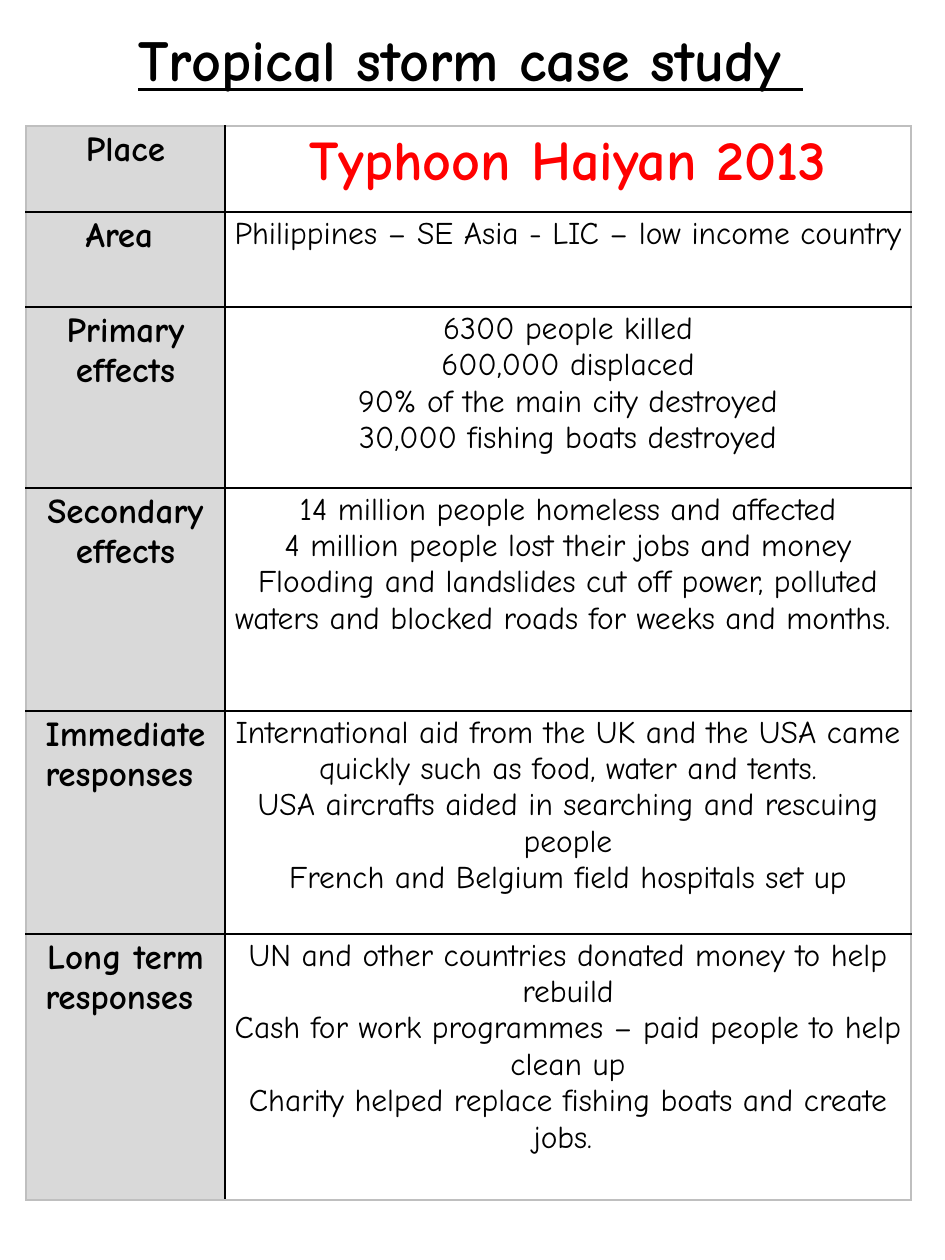
from dataclasses import dataclass

from lxml import etree
from pptx import Presentation
from pptx import util as u
from pptx.dml import color
from pptx.enum import text
from pptx.oxml import ns

PX = 914400 / 126


@dataclass(frozen=True)
class Theme:
    font: str = "Comic Neue"
    ink: str = "000000"
    accent: str = "FF0000"
    label_fill: str = "D9D9D9"
    outer_line: str = "BFBFBF"
    title_size: float = 33.2
    headline_size: int = 32
    label_size: int = 20
    body_size: int = 18
    line_width: int = 1


COLUMN_WIDTHS = (199, 686)
# Row height, label, facts
ROWS = [
    (86, "Place", ["Typhoon Haiyan 2013"]),
    (95, "Area ", ["Philippines – SE Asia - LIC – low income country"]),
    (181, "Primary effects", [
        "6300 people killed",
        "600,000 displaced",
        "90% of the main city destroyed",
        "30,000 fishing boats destroyed",
    ]),
    (223, "Secondary effects", [
        "14 million people homeless and affected",
        "4 million people lost their jobs and money",
        "Flooding and landslides cut off power, polluted waters and "
        "blocked roads for weeks and months. ",
    ]),
    (223, "Immediate responses ", [
        "International aid from the UK and the USA came quickly such as "
        "food, water and tents.",
        "USA aircrafts aided in searching and rescuing people",
        "French and Belgium field hospitals set up",
    ]),
    (266, "Long term responses ", [
        "UN and other countries donated money to help rebuild",
        "Cash for work programmes – paid people to help clean up",
        "Charity helped replace fishing boats and create jobs. ",
    ]),
]


def px(length):
    return u.Emu(round(length * PX))


def write(frame, lines, *, font, size, ink, bold=False, underline=False,
          spacing=1.0):
    """Fill a text frame with one centred paragraph per line."""
    for index, line in enumerate(lines):
        paragraph = frame.add_paragraph() if index else frame.paragraphs[0]
        paragraph.alignment = text.PP_ALIGN.CENTER
        paragraph.line_spacing = spacing
        run = paragraph.add_run()
        run.text = line
        run.font.name = font
        run.font.size = u.Pt(size)
        run.font.bold = bold
        run.font.underline = underline
        run.font.color.rgb = color.RGBColor.from_string(ink)


class CaseStudySlide:
    def __init__(self, slide, theme):
        self.slide = slide
        self.theme = theme

    def title(self, line, left, top, width, height):
        shape = self.slide.shapes.title
        shape.left, shape.top = px(left), px(top)
        shape.width, shape.height = px(width), px(height)
        frame = shape.text_frame
        frame.auto_size = text.MSO_AUTO_SIZE.NONE
        frame.word_wrap = True
        frame.vertical_anchor = text.MSO_ANCHOR.MIDDLE
        write(frame, [line], font=self.theme.font, size=self.theme.title_size,
              ink=self.theme.ink, bold=True, underline=True, spacing=0.9)

    def borders(self, cell, outer_sides):
        """Draw all four edges, lighter on the outside of the table."""
        properties = cell._tc.get_or_add_tcPr()
        for side in "LRTB":
            line = etree.SubElement(properties, ns.qn(f"a:ln{side}"),
                                    w=str(u.Pt(self.theme.line_width)))
            fill = etree.SubElement(line, ns.qn("a:solidFill"))
            ink = self.theme.outer_line if side in outer_sides else self.theme.ink
            etree.SubElement(fill, ns.qn("a:srgbClr"), val=ink)

    def cell(self, cell, lines, outer_sides, fill=None, **style):
        self.borders(cell, outer_sides)
        if fill:
            cell.fill.solid()
            cell.fill.fore_color.rgb = color.RGBColor.from_string(fill)
        else:
            cell.fill.background()
        cell.margin_left = cell.margin_right = px(9)
        cell.margin_top = cell.margin_bottom = px(4)
        write(cell.text_frame, lines, font=self.theme.font, **style)

    def table(self, rows, widths, left, top):
        theme = self.theme
        heights = [row[0] for row in rows]
        table = self.slide.shapes.add_table(
            len(rows), len(widths), px(left), px(top),
            px(sum(widths)), px(sum(heights))).table
        table.first_row = table.horz_banding = False
        for column, width in zip(table.columns, widths):
            column.width = px(width)

        label = dict(size=theme.label_size, ink=theme.ink, bold=True)
        body = dict(size=theme.body_size, ink=theme.ink)
        headline = dict(size=theme.headline_size, ink=theme.accent, bold=True)
        last = len(rows) - 1
        for index, (height, name, facts) in enumerate(rows):
            table.rows[index].height = px(height)
            edges = ("T" if index == 0 else "") + ("B" if index == last else "")
            self.cell(table.cell(index, 0), [name], edges + "L",
                      fill=theme.label_fill, **label)
            self.cell(table.cell(index, 1), facts, edges + "R",
                      **(body if index else headline))


def main():
    presentation = Presentation()
    presentation.slide_width, presentation.slide_height = px(945), px(1260)
    title_only = presentation.slide_layouts[5]
    page = CaseStudySlide(presentation.slides.add_slide(title_only), Theme())

    # Heading
    page.title("Tropical storm case study ", 63, 0, 815, 126)

    # Case study facts
    page.table(ROWS, COLUMN_WIDTHS, 26, 126)

    presentation.save("out.pptx")


if __name__ == "__main__":
    main()
